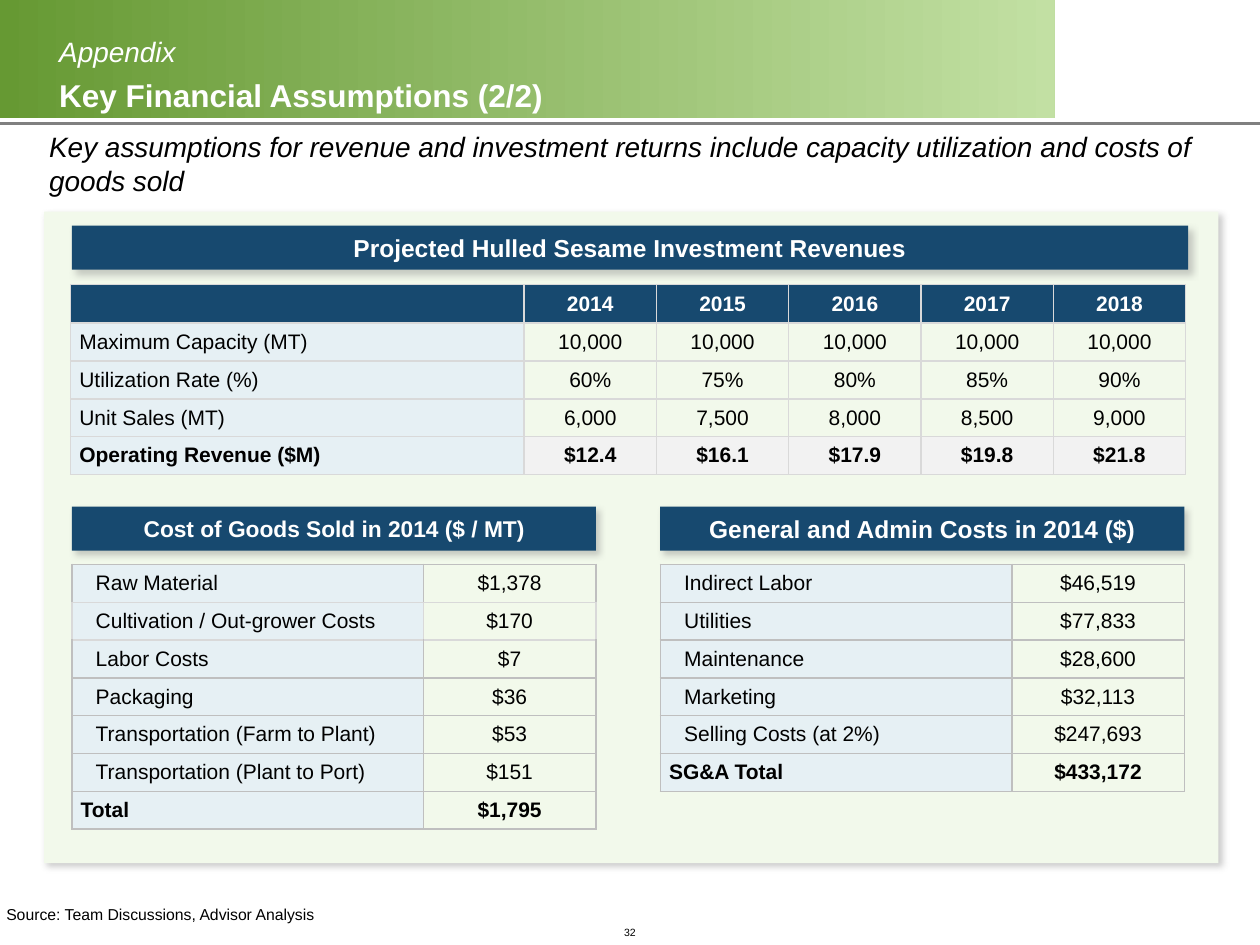
import lxml.etree
import pptx
import pptx.dml.color
import pptx.enum.shapes
import pptx.enum.text
import pptx.oxml
import pptx.oxml.ns
import pptx.util
from dataclasses import dataclass
from pptx.util import Inches

ALIGN = pptx.enum.text.PP_ALIGN
ANCHOR = pptx.enum.text.MSO_ANCHOR
RECTANGLE = pptx.enum.shapes.MSO_SHAPE.RECTANGLE


@dataclass(frozen=True)
class Theme:
    font: str = "Arial"
    banner_start: str = "669933"
    banner_end: str = "C2E0A3"
    rule: str = "808080"
    panel: str = "F2F9EB"
    navy: str = "17496F"
    label: str = "E6F0F4"
    total: str = "F2F2F2"
    grid: str = "BFBFBF"
    light_grid: str = "D9D9D9"
    ink: str = "000000"
    white: str = "FFFFFF"
    title: int = 18
    lead: int = 16
    heading: int = 14
    small_heading: int = 13
    body: int = 12
    source: int = 9
    page: int = 6


THEME = Theme()

SECTION = "Appendix"
TITLE = "Key Financial Assumptions (2/2)"
LEAD = ("Key assumptions for revenue and investment returns include "
        "capacity utilization and costs of goods sold")
SOURCE = "Source: Team Discussions, Advisor Analysis"
PAGE = "32"

HEADINGS = [
    ("Projected Hulled Sesame Investment Revenues", 0.57, 1.79, 8.86, THEME.heading),
    ("Cost of Goods Sold in 2014 ($ / MT)", 0.57, 4.02, 4.16, THEME.small_heading),
    ("General and Admin Costs in 2014 ($)", 5.24, 4.02, 4.16, THEME.heading),
]

COST_WIDTHS = [2.79, 1.37]
TABLES = [
    {"left": 0.57, "top": 4.48, "widths": COST_WIDTHS, "indent": 0.12, "light_row": 1,
     "rows": [
         ("Raw Material", "$1,378"),
         ("Cultivation / Out-grower Costs", "$170"),
         ("Labor Costs", "$7"),
         ("Packaging", "$36"),
         ("Transportation (Farm to Plant)", "$53"),
         ("Transportation (Plant to Port)", "$151"),
         ("Total", "$1,795"),
     ]},
    {"left": 5.24, "top": 4.48, "widths": COST_WIDTHS, "indent": 0.12,
     "rows": [
         ("Indirect Labor", "$46,519"),
         ("Utilities", "$77,833"),
         ("Maintenance", "$28,600"),
         ("Marketing", "$32,113"),
         ("Selling Costs (at 2%)", "$247,693"),
         ("SG&A Total", "$433,172"),
     ]},
    {"left": 0.56, "top": 2.26, "widths": [3.6] + [1.05] * 5, "header": True,
     "grid": THEME.light_grid, "total_fill": THEME.total,
     "rows": [
         ("", "2014", "2015", "2016", "2017", "2018"),
         ("Maximum Capacity (MT)",) + ("10,000",) * 5,
         ("Utilization Rate (%)", "60%", "75%", "80%", "85%", "90%"),
         ("Unit Sales (MT)", "6,000", "7,500", "8,000", "8,500", "9,000"),
         ("Operating Revenue ($M)", "$12.4", "$16.1", "$17.9", "$19.8", "$21.8"),
     ]},
]
ROW_HEIGHT = 0.3


def rgb(color):
    return pptx.dml.color.RGBColor.from_string(color)


def apply(target, formats):
    for name, value in formats.items():
        setattr(target, name, value)


def add_run(paragraph, text, size, color=THEME.ink, **formats):
    run = paragraph.add_run()
    run.text = text
    apply(run.font, {"name": THEME.font, "size": pptx.util.Pt(size), **formats})
    run.font.color.rgb = rgb(color)


def format_frame(frame, anchor, wrap=True, vertical=0.05):
    apply(frame, {
        "auto_size": pptx.enum.text.MSO_AUTO_SIZE.NONE, "word_wrap": wrap,
        "vertical_anchor": anchor,
        "margin_left": Inches(0.05), "margin_right": Inches(0.05),
        "margin_top": Inches(vertical), "margin_bottom": Inches(vertical),
    })


def add_text(slide, text, box, size, anchor, align=ALIGN.LEFT, wrap=True, **formats):
    frame = slide.shapes.add_textbox(*map(Inches, box)).text_frame
    format_frame(frame, anchor, wrap)
    frame.paragraphs[0].alignment = align
    add_run(frame.paragraphs[0], text, size, **formats)


def add_block(slide, box, color=None, shadow=False):
    block = slide.shapes.add_shape(RECTANGLE, *map(Inches, box))
    block.line.fill.background()
    block.shadow.inherit = False
    if color:
        block.fill.solid()
        block.fill.fore_color.rgb = rgb(color)
    if shadow:
        effects = block.element.spPr.find(pptx.oxml.ns.qn("a:effectLst"))
        effects.append(pptx.oxml.parse_xml(
            f'<a:outerShdw {pptx.oxml.ns.nsdecls("a")} blurRad="{pptx.util.Pt(4)}" '
            f'dist="{pptx.util.Pt(3)}" dir="2700000" algn="tl" rotWithShape="0">'
            f'<a:srgbClr val="{THEME.rule}"><a:alpha val="40000"/></a:srgbClr>'
            '</a:outerShdw>'))
    return block


def add_banner(slide):
    banner = add_block(slide, (0, 0, 8.37, 0.94))
    banner.fill.gradient()
    banner.fill.gradient_angle = 0
    stops = zip(banner.fill.gradient_stops, (THEME.banner_start, THEME.banner_end))
    for position, (stop, color) in enumerate(stops):
        stop.position = position
        stop.color.rgb = rgb(color)
    rule = slide.shapes.add_connector(
        pptx.enum.shapes.MSO_CONNECTOR.STRAIGHT,
        Inches(0), Inches(0.98), Inches(10), Inches(0.98))
    rule.line.color.rgb = rgb(THEME.rule)
    rule.line.width = pptx.util.Pt(2.25)
    lxml.etree.SubElement(rule.element.spPr, pptx.oxml.ns.qn("a:effectLst"))


def fill_title(slide):
    title = slide.shapes.title
    title.element.getparent().append(title.element)
    apply(title, dict(zip(("left", "top", "width", "height"),
                          map(Inches, (0.42, 0.04, 7.87, 0.86)))))
    format_frame(title.text_frame, ANCHOR.BOTTOM, vertical=0)
    paragraph = title.text_frame.paragraphs[0]
    apply(paragraph, {"alignment": ALIGN.LEFT, "line_spacing": 1.2})
    add_run(paragraph, SECTION, THEME.lead, THEME.white, italic=True)
    paragraph.add_line_break()
    add_run(paragraph, TITLE, THEME.title, THEME.white, bold=True)


def set_borders(cell, colors):
    properties = cell._tc.get_or_add_tcPr()
    for place, (side, color) in enumerate(zip("LRTB", colors)):
        properties.insert(place, pptx.oxml.parse_xml(
            f'<a:ln{side} {pptx.oxml.ns.nsdecls("a")} w="{pptx.util.Pt(1)}">'
            f'<a:solidFill><a:srgbClr val="{color}"/></a:solidFill></a:ln{side}>'))


def add_table(slide, left, top, widths, rows, header=False, indent=0,
              grid=THEME.grid, light_row=None, total_fill=THEME.panel):
    table = slide.shapes.add_table(
        len(rows), len(widths), Inches(left), Inches(top),
        Inches(sum(widths)), Inches(ROW_HEIGHT * len(rows))).table
    apply(table, {"first_row": header, "horz_banding": False})
    for column, width in zip(table.columns, widths):
        column.width = Inches(width)
    for r, row in enumerate(rows):
        table.rows[r].height = Inches(ROW_HEIGHT)
        is_header, is_total = header and r == 0, r == len(rows) - 1
        side, above, below = (
            THEME.light_grid if light_row in touching else grid
            for touching in ((r,), (r - 1, r), (r, r + 1)))
        for c, text in enumerate(row):
            cell = table.cell(r, c)
            apply(cell, {"vertical_anchor": ANCHOR.MIDDLE,
                         "margin_left": Inches(0.07), "margin_right": Inches(0.07),
                         "margin_top": 0, "margin_bottom": 0})
            cell.fill.solid()
            cell.fill.fore_color.rgb = rgb(
                THEME.navy if is_header else THEME.label if c == 0
                else total_fill if is_total else THEME.panel)
            set_borders(cell, (side, side, above, below))
            paragraph = cell.text_frame.paragraphs[0]
            paragraph.alignment = ALIGN.CENTER if c else ALIGN.LEFT
            if indent and c == 0 and not is_total:
                paragraph._p.get_or_add_pPr().set("marL", str(Inches(indent)))
            if text:
                add_run(paragraph, text, THEME.body,
                        THEME.white if is_header else THEME.ink,
                        bold=is_header or is_total)


def main():
    deck = pptx.Presentation()
    apply(deck, {"slide_width": Inches(10), "slide_height": Inches(7.5)})
    slide = deck.slides.add_slide(deck.slide_layouts[5])
    add_banner(slide)
    add_text(slide, PAGE, (4.9, 7.3, 0.2, 0.2), THEME.page, ANCHOR.BOTTOM,
             ALIGN.CENTER, wrap=False)
    fill_title(slide)
    add_text(slide, LEAD, (0.34, 0.98, 9.31, 0.64), THEME.lead, ANCHOR.TOP, italic=True)
    add_text(slide, SOURCE, (0, 6.61, 10, 0.77), THEME.source, ANCHOR.BOTTOM)
    add_block(slide, (0.35, 1.68, 9.32, 5.17), THEME.panel, shadow=True)
    for heading, left, top, width, size in HEADINGS:
        bar = add_block(slide, (left, top, width, 0.35), THEME.navy, shadow=True)
        format_frame(bar.text_frame, ANCHOR.MIDDLE)
        bar.text_frame.paragraphs[0].alignment = ALIGN.CENTER
        add_run(bar.text_frame.paragraphs[0], heading, size, THEME.white, bold=True)
    for table in TABLES:
        add_table(slide, **table)
    deck.save("out.pptx")


if __name__ == "__main__":
    main()
